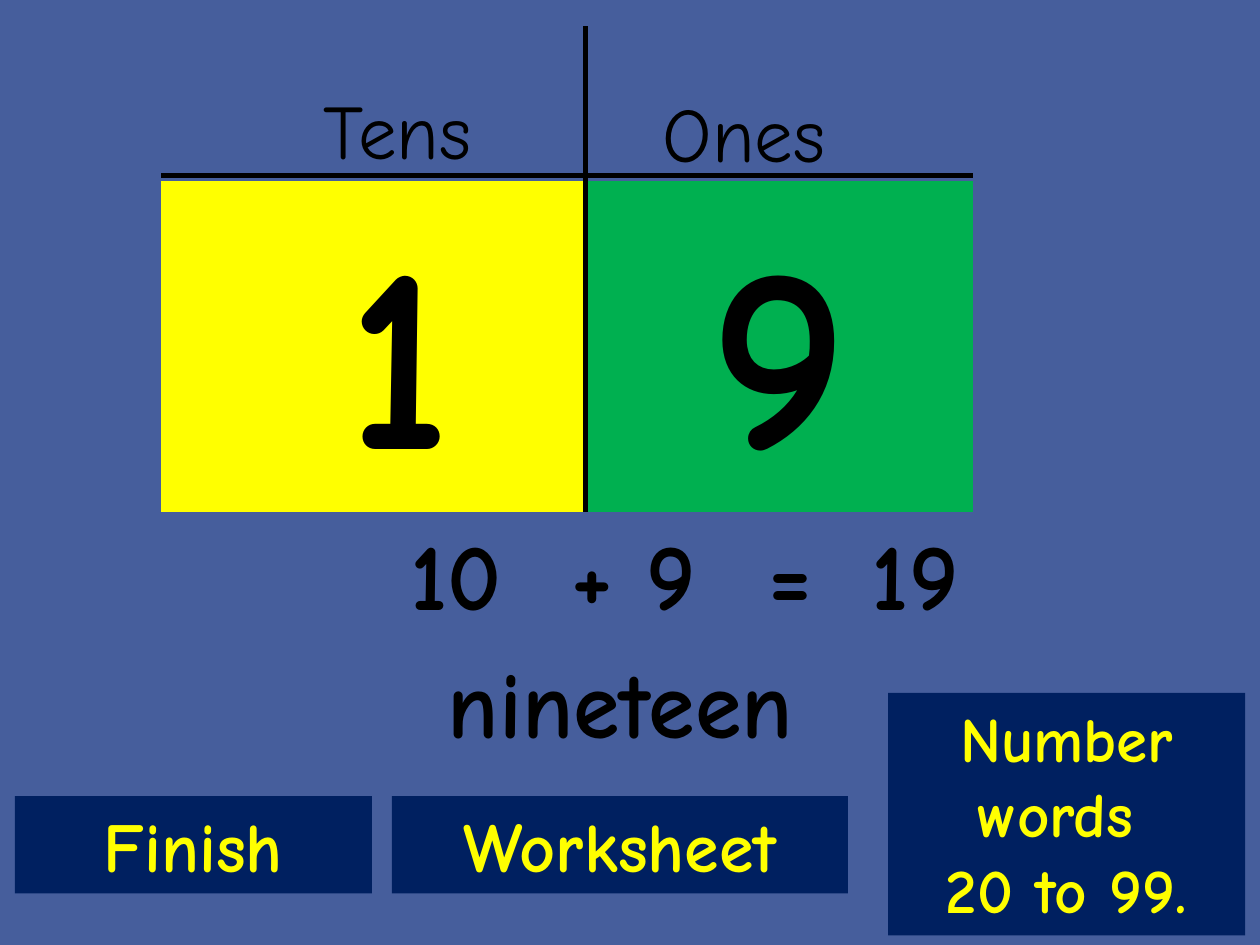
from lxml.etree import SubElement
from pptx import Presentation
from pptx.dml.color import RGBColor
from pptx.enum.shapes import MSO_CONNECTOR, MSO_SHAPE
from pptx.enum.text import MSO_ANCHOR, PP_ALIGN
from pptx.oxml.ns import qn
from pptx.util import Pt

BLACK = RGBColor(0x00, 0x00, 0x00)
BLUE = RGBColor(0x46, 0x5E, 0x9C)
NAVY = RGBColor(0x00, 0x20, 0x60)
YELLOW = RGBColor(0xFF, 0xFF, 0x00)
GREEN = RGBColor(0x00, 0xB0, 0x50)
FONT = "Comic Neue"


def write(shape, lines, size, color=BLACK, bold=True, anchor=MSO_ANCHOR.TOP):
    """Fill a shape with centred lines of one style."""
    frame = shape.text_frame
    frame.word_wrap = True
    frame.vertical_anchor = anchor
    frame.text = "\n".join(lines)
    for paragraph in frame.paragraphs:
        paragraph.alignment = PP_ALIGN.CENTER
        paragraph.font.name = FONT
        paragraph.font.size = Pt(size)
        paragraph.font.bold = bold
        paragraph.font.color.rgb = color
    return frame


def add_label(slide, left, top, width, height, text, size, **style):
    """Add a text box holding one centred line."""
    shape = slide.shapes.add_textbox(Pt(left), Pt(top), Pt(width), Pt(height))
    return write(shape, [text], size, **style)


def add_card(slide, left, top, width, height, fill, lines, size, color=BLACK):
    """Add a plain filled rectangle with centred text."""
    shape = slide.shapes.add_shape(
        MSO_SHAPE.RECTANGLE, Pt(left), Pt(top), Pt(width), Pt(height)
    )
    shape.shadow.inherit = False
    shape.fill.solid()
    shape.fill.fore_color.rgb = fill
    shape.line.fill.background()
    return write(shape, lines, size, color)


def add_rule(slide, start_x, start_y, end_x, end_y):
    """Add a straight black line without a shadow."""
    rule = slide.shapes.add_connector(
        MSO_CONNECTOR.STRAIGHT, Pt(start_x), Pt(start_y), Pt(end_x), Pt(end_y)
    )
    rule.line.color.rgb = BLACK
    rule.line.width = Pt(3)
    SubElement(rule._element.spPr, qn("a:effectLst"))


def add_place_value_chart(slide, left, top, width, height):
    """Draw the tens and ones columns with their digits."""
    divider = left + 242.5
    right, bottom = left + width, top + height
    header_line, card_top = top + 85.5, top + 88.5
    card_height = bottom - card_top
    label_width, label_height = 142.5, 90
    add_label(slide, left + 64, top + 13.5, label_width, label_height,
              "Tens", 44, bold=False, anchor=MSO_ANCHOR.MIDDLE)
    add_label(slide, left + 262, top + 15, label_width, label_height,
              "Ones", 44, bold=False, anchor=MSO_ANCHOR.MIDDLE)
    add_rule(slide, right, header_line, left, header_line)
    tens = add_card(slide, left, card_top, width, card_height, YELLOW, ["1"], 150)
    tens.margin_right = Pt(199)
    add_card(slide, divider, card_top, right - divider, card_height,
             GREEN, ["9"], 150)
    add_rule(slide, divider, top, divider, bottom)


def add_number_sentence(slide, left, top, width, height):
    """Write the sum and, below it, the number word."""
    line_height = height / 2
    sum_left = left + 16.5
    add_label(slide, sum_left, top, 119, line_height, "10", 54)
    add_label(slide, sum_left + 101.5, top, 119, line_height, "+ 9", 54)
    total = add_label(slide, sum_left + 204, top, 176.5, line_height, "=", 54)
    gap = total.paragraphs[0].add_run()
    gap.text = " "
    gap._r.get_or_add_rPr().set("spc", "1500")
    total.paragraphs[0].add_run().text = "19"
    add_label(slide, left, top + line_height, width, line_height, "nineteen", 54)


def add_buttons(slide, left, top, width, height):
    """Place the three navigation buttons along the bottom."""
    side_width, button_top, button_height = 204, top + 59, 55.5
    add_card(slide, left, button_top, side_width, button_height,
             NAVY, ["Finish"], 40, YELLOW)
    add_card(slide, left + 215.5, button_top, 260.5, button_height,
             NAVY, ["Worksheet"], 40, YELLOW)
    add_card(slide, left + width - side_width, top, side_width, height,
             NAVY, ["Number words ", "20 to 99."], 36, YELLOW)


def main():
    """Build and save the slide."""
    presentation = Presentation()
    presentation.slide_width = Pt(720)
    presentation.slide_height = Pt(540)
    slide = presentation.slides.add_slide(presentation.slide_layouts[6])
    slide.background.fill.solid()
    slide.background.fill.fore_color.rgb = BLUE
    add_place_value_chart(slide, 92, 15, 464, 277.5)
    add_number_sentence(slide, 184.5, 291.5, 340, 145.5)
    add_buttons(slide, 8.5, 396, 703, 138.5)
    presentation.save("out.pptx")


if __name__ == "__main__":
    main()
